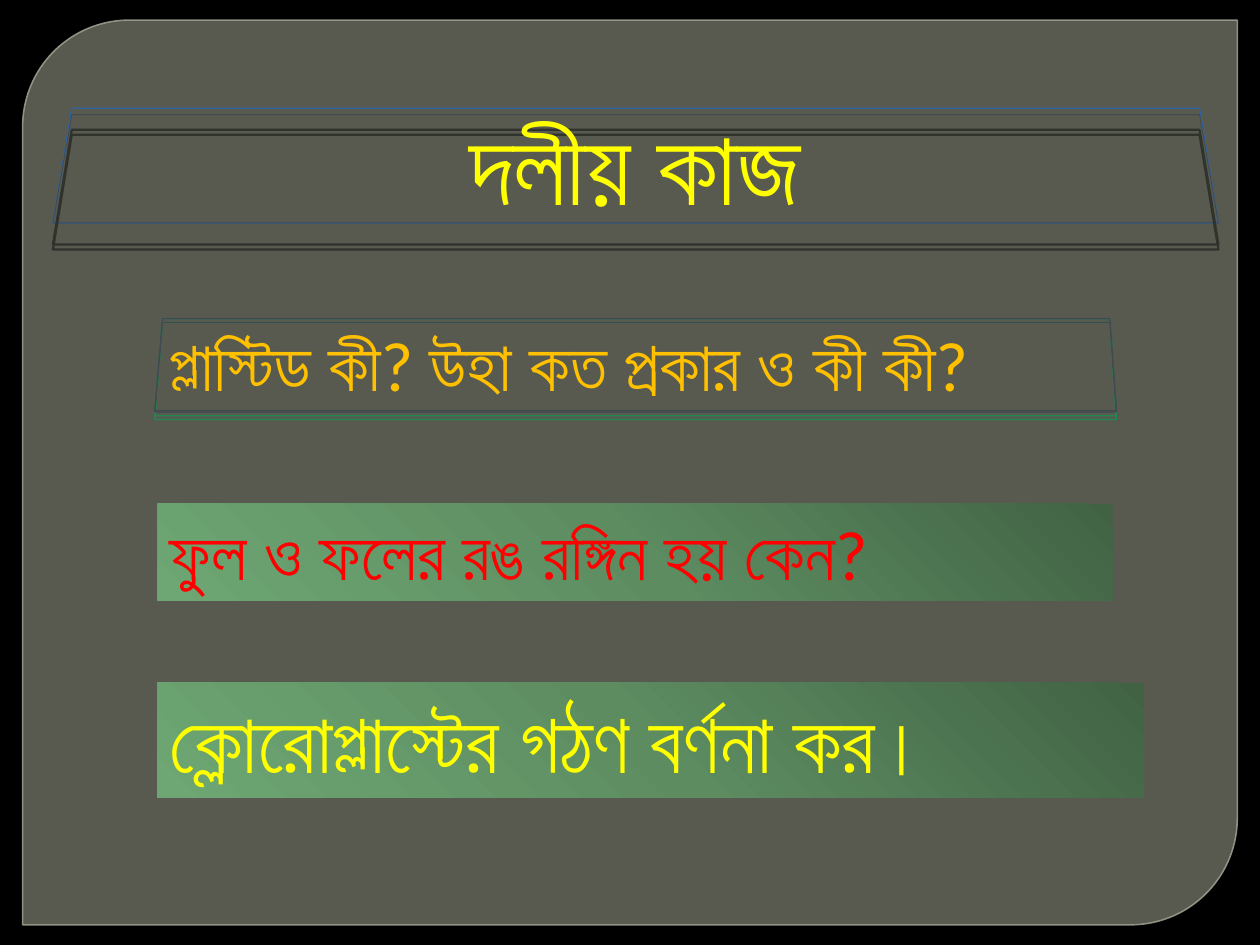
import copy

import pptx
import pptx.dml.color
import pptx.enum.shapes
import pptx.enum.text
import pptx.oxml
import pptx.oxml.ns
import pptx.util

Inches = pptx.util.Inches
Pt = pptx.util.Pt
RGB = pptx.dml.color.RGBColor
KIND = pptx.enum.shapes.MSO_SHAPE
ALIGN = pptx.enum.text.PP_ALIGN
qn = pptx.oxml.ns.qn

BLACK = RGB(0x00, 0x00, 0x00)
PANEL = RGB(0x88, 0x8B, 0x7B)
EDGE = RGB(0x9D, 0xA0, 0x90)
YELLOW = RGB(0xFF, 0xFF, 0x00)
AMBER = RGB(0xFF, 0xC0, 0x00)
RED = RGB(0xFF, 0x00, 0x00)
BLUE = RGB(0x2F, 0x63, 0xA0)
SLATE = RGB(0x40, 0x4A, 0x50)
DARK = RGB(0x30, 0x32, 0x2C)
GREEN = RGB(0x1F, 0x8A, 0x50)
GREENS = [(0, RGB(0x41, 0x63, 0x44)), (0.5, RGB(0x5D, 0x8C, 0x61)),
          (1, RGB(0x6E, 0xA7, 0x73))]


def fade(fill, share):
    """Set the opacity of a solid colour, in percent."""
    color = fill.find(".//" + qn("a:srgbClr"))
    alpha = color.makeelement(qn("a:alpha"), {"val": str(share * 1000)})
    color.append(alpha)


def add_panel(slide):
    panel = slide.shapes.add_shape(
        KIND.ROUND_2_DIAG_RECTANGLE,
        Inches(0.18), Inches(0.16), Inches(9.64), Inches(7.18))
    panel.adjustments[0] = 0.118
    panel.adjustments[1] = 0
    panel.shadow.inherit = False
    panel.fill.solid()
    panel.fill.fore_color.rgb = PANEL
    panel.line.color.rgb = EDGE
    panel.line.width = Pt(0.87)
    props = panel.element.spPr
    fade(props.find(qn("a:solidFill")), 65)
    fade(props.find(qn("a:ln")), 88)


def add_frame(slide, top, base, color, width):
    """Outline a trapezoid; top and base are (left, right, y)."""
    left, right, y = top
    low, high, foot = base
    form = slide.shapes.build_freeform(Inches(left), Inches(y), scale=1.0)
    form.add_line_segments([(Inches(a), Inches(b)) for a, b in
                            [(right, y), (high, foot), (low, foot)]])
    frame = form.convert_to_shape()
    frame.shadow.inherit = False
    frame.fill.background()
    frame.line.color.rgb = color
    frame.line.width = Pt(width)


def set_text(shape, text, size, color, align=ALIGN.LEFT):
    frame = shape.text_frame
    frame.word_wrap = True
    frame.auto_size = pptx.enum.text.MSO_AUTO_SIZE.NONE
    frame.vertical_anchor = pptx.enum.text.MSO_ANCHOR.TOP
    frame.text = text
    line = frame.paragraphs[0]
    line.alignment = align
    line.font.name = "Calibri"
    line.font.size = Pt(size)
    line.font.color.rgb = color


def add_title(slide, text):
    title = slide.shapes.title
    title.left, title.top = Inches(0.5), Inches(0.75)
    title.width, title.height = Inches(9.08), Inches(1.11)
    set_text(title, text, 60, YELLOW, ALIGN.CENTER)


def add_task(slide, text, top, width, height, size, color, filled=True):
    box = slide.shapes.add_textbox(
        Inches(1.25), Inches(top), Inches(width), Inches(height))
    if filled:
        box.fill.gradient()
        box.fill.gradient_angle = 225
        stops = box.element.spPr.find(".//" + qn("a:gsLst"))
        stops.append(copy.deepcopy(stops[0]))
        for stop, (place, shade) in zip(box.fill.gradient_stops, GREENS):
            stop.position = place
            stop.color.rgb = shade
    set_text(box, text, size, color)


def main():
    deck = pptx.Presentation()
    deck.slide_width, deck.slide_height = Inches(10), Inches(7.5)
    slide = deck.slides.add_slide(deck.slide_layouts[5])
    slide.background.fill.solid()
    slide.background.fill.fore_color.rgb = BLACK
    add_panel(slide)

    # Wire frames around the title: y of top and base, colour, line width
    for top, base, color, width in [
            (0.86, 1.77, BLUE, 0.75), (0.91, 1.77, SLATE, 0.5),
            (1.03, 1.94, DARK, 1.25), (1.07, 1.98, DARK, 1.25)]:
        add_frame(slide, (0.57, 9.52, top), (0.42, 9.67, base), color, width)

    # Wire frames around the first task
    for top, base, color in [(2.56, 3.33, GREEN), (2.53, 3.3, GREEN),
                             (2.56, 3.27, SLATE), (2.53, 3.26, SLATE)]:
        add_frame(slide, (1.29, 8.81, top), (1.23, 8.86, base), color, 0.75)

    # Title and tasks, brought in front of the frames
    add_title(slide, "দলীয় কাজ")
    slide.shapes.element.append(slide.shapes.title.element)
    add_task(slide, "প্লাস্টিড কী? উহা কত প্রকার ও কী কী?",
             2.5, 7.58, 0.77, 40, AMBER, filled=False)
    add_task(slide, "ফুল ও ফলের রঙ রঙ্গিন হয় কেন?",
             4, 7.58, 0.77, 40, RED)
    add_task(slide, "ক্লোরোপ্লাস্টের গঠণ বর্ণনা কর।",
             5.42, 7.83, 0.91, 48, YELLOW)
    deck.save("out.pptx")


if __name__ == "__main__":
    main()
